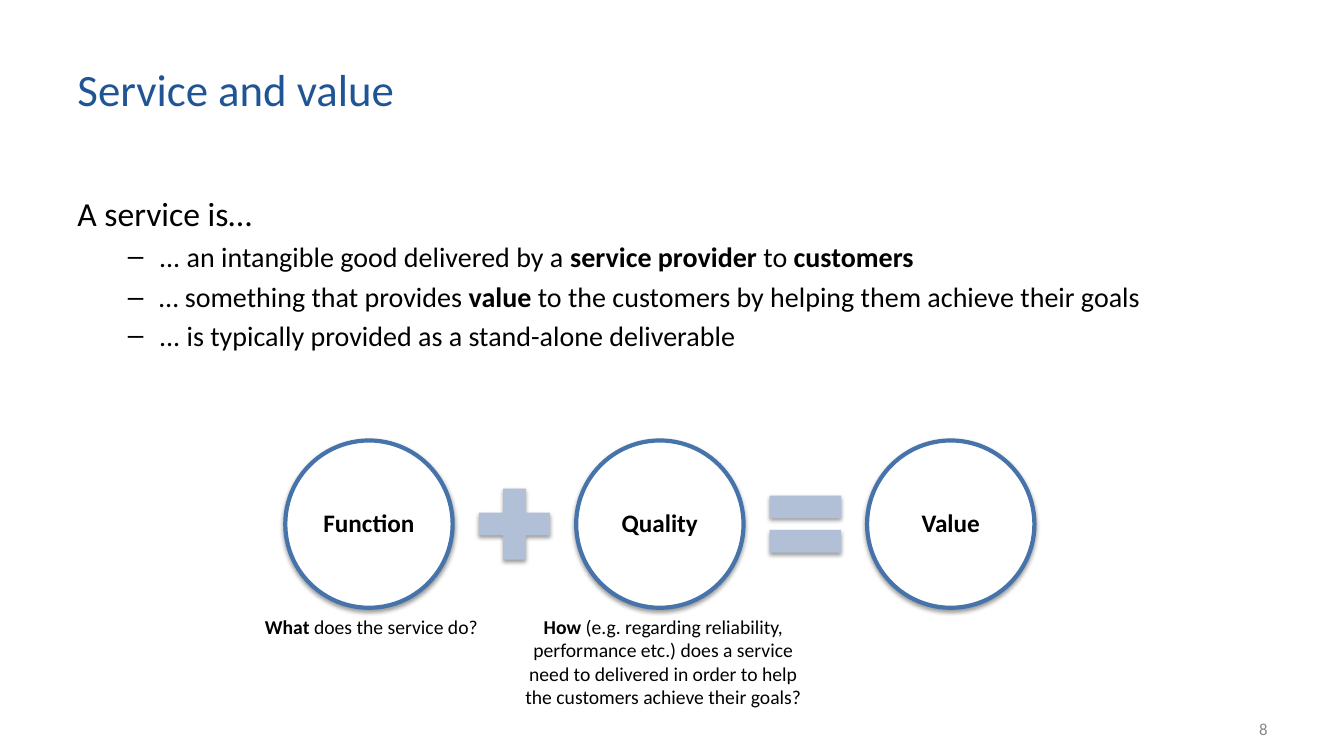
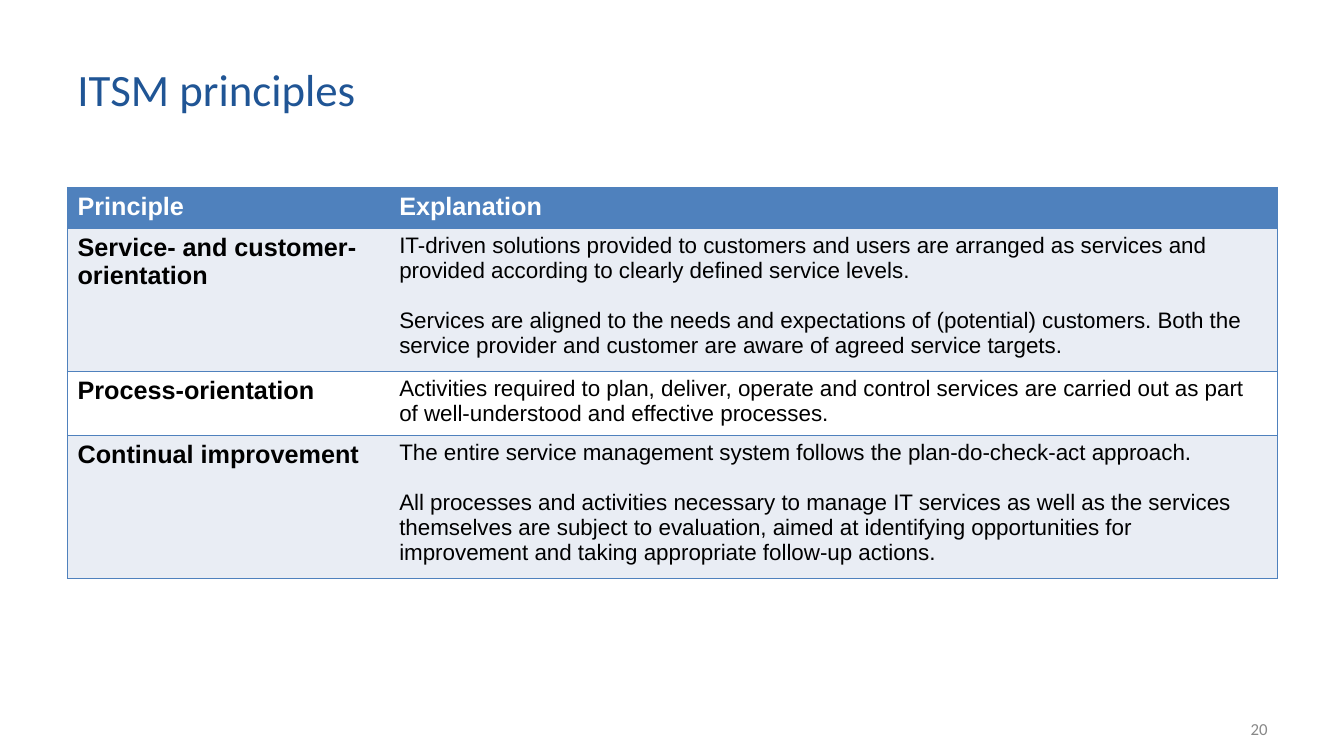
from lxml import etree
from pptx import Presentation
from pptx.dml.color import RGBColor
from pptx.enum.shapes import MSO_SHAPE
from pptx.enum.text import MSO_ANCHOR, PP_ALIGN
from pptx.oxml.ns import qn
from pptx.util import Inches, Pt

COLORS = {
    "title": "205595", "text": "000000", "number": "888888", "white": "FFFFFF",
    "ring": "4674AA", "operator": "B1C0D7", "header": "4F81BD", "band": "E9EDF4",
}
LEFT, CENTER, RIGHT = PP_ALIGN.LEFT, PP_ALIGN.CENTER, PP_ALIGN.RIGHT
TOP, MIDDLE = MSO_ANCHOR.TOP, MSO_ANCHOR.MIDDLE
OVAL, PLUS, EQUAL = MSO_SHAPE.OVAL, MSO_SHAPE.MATH_PLUS, MSO_SHAPE.MATH_EQUAL
HEADING_FONT, TABLE_FONT = "Calibri", "Arial"
NO_TABLE_STYLE = "{2D5ABB26-0587-4C30-8999-92F81FD0307C}"

TITLE_BOX = (0.67, 0.3, 9.91, 1.15)
NUMBER_BOX = (9.56, 7.03, 3.11, 0.4)
BODY_BOX = (0.67, 1.86, 12, 5.06)
DIAGRAM_BOX = (2.83, 4.37, 7.43, 1.66)

SERVICE_POINTS = [
    [("... an intangible good delivered by a ", False), ("service provider", True),
     (" to ", False), ("customers", True)],
    [("… something that provides ", False), ("value ", True),
     ("to the customers by helping them achieve their goals", False)],
    [("... is typically provided as a stand-alone deliverable", False)],
]
CAPTIONS = [
    ((2.3, 6.05, 2.77, 0.34), [("What", True), (" does the service do?", False)]),
    ((5.03, 6.05, 3.1, 1.04),
     [("How", True),
      (" (e.g. regarding reliability, performance etc.) does a service need to "
       "delivered in order to help the customers achieve their goals?", False)]),
]
PRINCIPLES = [
    (0.41, "Principle", ["Explanation"]),
    (1.33, "Service- and customer-orientation", [
        "IT-driven solutions provided to customers and users are arranged as services "
        "and provided according to clearly defined service levels.",
        "Services are aligned to the needs and expectations of (potential) customers. "
        "Both the service provider and customer are aware of agreed service targets."]),
    (0.59, "Process-orientation", [
        "Activities required to plan, deliver, operate and control services are carried "
        "out as part of well-understood and effective processes."]),
    (1.33, "Continual improvement", [
        "The entire service management system follows the plan-do-check-act approach.",
        "All processes and activities necessary to manage IT services as well as the "
        "services themselves are subject to evaluation, aimed at identifying "
        "opportunities for improvement and taking appropriate follow-up actions."]),
]


def rgb(name):
    return RGBColor.from_string(COLORS[name])


def place(box):
    return [Inches(length) for length in box]


def add_runs(paragraph, runs, size, color="text", font=HEADING_FONT):
    for text, bold in runs:
        run = paragraph.add_run()
        run.text = text
        run.font.size = Pt(size)
        run.font.name = font
        run.font.bold = bold
        run.font.color.rgb = rgb(color)


def add_text(slide, box, runs, size, color="text", align=LEFT, anchor=TOP):
    frame = slide.shapes.add_textbox(*place(box)).text_frame
    frame.word_wrap = True
    frame.vertical_anchor = anchor
    paragraph = frame.paragraphs[0]
    paragraph.alignment = align
    add_runs(paragraph, runs, size, color)
    return frame


def add_base_slide(presentation, title, number):
    slide = presentation.slides.add_slide(presentation.slide_layouts[6])
    add_text(slide, TITLE_BOX, [(title, False)], 32, "title", anchor=MIDDLE)
    add_text(slide, NUMBER_BOX, [(number, False)], 12, "number", RIGHT, MIDDLE)
    return slide


def set_dash(paragraph, left, hanging):
    properties = paragraph._p.get_or_add_pPr()
    properties.set("marL", str(Inches(left)))
    properties.set("indent", str(-Inches(hanging)))
    etree.SubElement(properties, qn("a:buFont"), typeface="Arial")
    etree.SubElement(properties, qn("a:buChar"), char="–")


def add_service_list(slide, box):
    frame = add_text(slide, box, [("A service is…", False)], 24)
    for point in SERVICE_POINTS:
        paragraph = frame.add_paragraph()
        set_dash(paragraph, 0.81, 0.31)
        if point is SERVICE_POINTS[-1]:
            paragraph.line_spacing = 1.15
        else:
            paragraph.space_before = Pt(4.8)
        add_runs(paragraph, point, 20)


def add_soft_shadow(shape):
    shape.shadow.inherit = False
    effects = shape._element.spPr.find(qn("a:effectLst"))
    shadow = etree.SubElement(effects, qn("a:outerShdw"), blurRad=str(Pt(3.1)),
                              dist=str(Pt(1.6)), dir="5400000", rotWithShape="0")
    color = etree.SubElement(shadow, qn("a:srgbClr"), val=COLORS["text"])
    etree.SubElement(color, qn("a:alpha"), val="38000")


def add_diagram_shape(slide, kind, box, fill):
    shape = slide.shapes.add_shape(kind, *place(box))
    shape.fill.solid()
    shape.fill.fore_color.rgb = rgb(fill)
    shape.line.fill.background()
    add_soft_shadow(shape)
    return shape


def add_circle(slide, box, label):
    circle = add_diagram_shape(slide, OVAL, box, "white")
    circle.line.color.rgb = rgb("ring")
    circle.line.width = Pt(3)
    frame = circle.text_frame
    frame.word_wrap = True
    frame.vertical_anchor = MIDDLE
    frame.margin_left = frame.margin_right = Inches(0.03)
    frame.margin_top = frame.margin_bottom = Inches(0.03)
    paragraph = frame.paragraphs[0]
    paragraph.alignment = CENTER
    paragraph.line_spacing = 0.9
    add_runs(paragraph, [(label, True)], 18)


def add_value_equation(slide, box):
    left, top, width, diameter = box
    labels = ["Function", "Quality", "Value"]
    step = (width - diameter) / (len(labels) - 1)
    for index, label in enumerate(labels):
        add_circle(slide, (left + index * step, top, diameter, diameter), label)
    size = 0.96
    offset = (step + diameter - size) / 2
    operators = [(PLUS, [0.235]), (EQUAL, [0.235, 0.118])]
    for index, (kind, adjustments) in enumerate(operators):
        operator_box = (left + index * step + offset, top + (diameter - size) / 2, size, size)
        operator = add_diagram_shape(slide, kind, operator_box, "operator")
        for position, value in enumerate(adjustments):
            operator.adjustments[position] = value


def set_borders(cell, edges):
    properties = cell._tc.get_or_add_tcPr()
    for edge in edges:
        line = etree.SubElement(properties, qn("a:ln" + edge), w=str(Pt(1)))
        fill = etree.SubElement(line, qn("a:solidFill"))
        etree.SubElement(fill, qn("a:srgbClr"), val=COLORS["header"])


def fill_cell(cell, texts, size, bold, color, fill, edges):
    set_borders(cell, edges)
    cell.fill.solid()
    cell.fill.fore_color.rgb = rgb(fill)
    frame = cell.text_frame
    for index, text in enumerate(texts):
        paragraph = frame.add_paragraph() if index else frame.paragraphs[0]
        if index:
            paragraph.space_before = Pt(18)
        add_runs(paragraph, [(text, bold)], size, color, TABLE_FONT)


def add_principles_table(slide, left, top, widths):
    height = sum(row[0] for row in PRINCIPLES)
    box = place((left, top, sum(widths), height))
    table = slide.shapes.add_table(len(PRINCIPLES), len(widths), *box).table
    table._tbl.tblPr.find(qn("a:tableStyleId")).text = NO_TABLE_STYLE
    for column, width in zip(table.columns, widths):
        column.width = Inches(width)
    for index, (row_height, principle, explanation) in enumerate(PRINCIPLES):
        table.rows[index].height = Inches(row_height)
        header = index == 0
        color = "white" if header else "text"
        fill = "header" if header else ("band" if index % 2 else "white")
        fill_cell(table.cell(index, 0), [principle], 18, True, color, fill, "LTB")
        fill_cell(table.cell(index, 1), explanation, 18 if header else 16, header,
                  color, fill, "RTB")


def add_service_slide(presentation):
    slide = add_base_slide(presentation, "Service and value", "8")
    add_service_list(slide, BODY_BOX)
    for box, runs in CAPTIONS:
        add_text(slide, box, runs, 14, align=CENTER)
    add_value_equation(slide, DIAGRAM_BOX)


def add_principles_slide(presentation):
    slide = add_base_slide(presentation, "ITSM principles", "20")
    add_principles_table(slide, BODY_BOX[0], 1.86, [3.19, 8.81])


def main():
    presentation = Presentation()
    presentation.slide_width = Inches(13.33)
    presentation.slide_height = Inches(7.5)
    add_service_slide(presentation)
    add_principles_slide(presentation)
    presentation.save("out.pptx")


if __name__ == "__main__":
    main()
